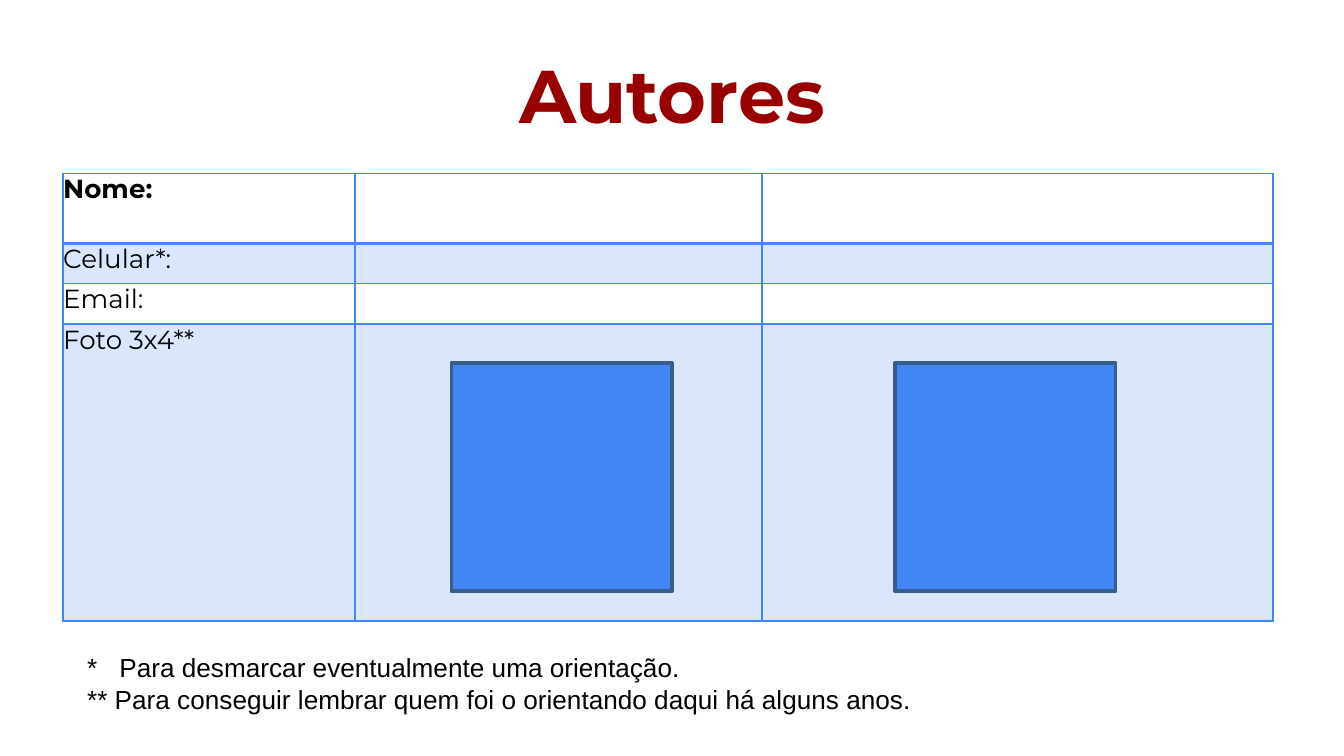
import pptx
import pptx.dml.color
import pptx.enum.shapes
import pptx.enum.text
import pptx.oxml
import pptx.oxml.ns
import pptx.util
from lxml import etree

Inches = pptx.util.Inches
Pt = pptx.util.Pt
qn = pptx.oxml.ns.qn

COLORS = {"title": "980000", "text": "000000", "blue": "4285F4", "photo_line": "385D8A"}


def rgb(name):
    return pptx.dml.color.RGBColor.from_string(COLORS[name])


def set_borders(cell, widths):
    """Draw the left, right, top and bottom borders with the given point widths."""
    properties = cell._tc.get_or_add_tcPr()
    for index, (side, width) in enumerate(zip("LRTB", widths)):
        line = etree.Element(qn(f"a:ln{side}"), w=str(Pt(width)))
        fill = etree.SubElement(line, qn("a:solidFill"))
        etree.SubElement(fill, qn("a:srgbClr"), val=COLORS["blue"])
        properties.insert(index, line)


presentation = pptx.Presentation()
presentation.slide_width = Inches(10)
presentation.slide_height = Inches(10) * 9 // 16
slide = presentation.slides.add_slide(presentation.slide_layouts[6])

# Title
title = slide.shapes.add_textbox(Inches(0.5), Inches(0.23), Inches(9), Inches(0.94))
frame = title.text_frame
frame.word_wrap = True
frame.vertical_anchor = pptx.enum.text.MSO_ANCHOR.MIDDLE
paragraph = frame.paragraphs[0]
paragraph.text = "Autores"
paragraph.alignment = pptx.enum.text.PP_ALIGN.CENTER
paragraph.font.name = "Montserrat"
paragraph.font.size = Pt(40)
paragraph.font.bold = True
paragraph.font.color.rgb = rgb("title")

# Author table
labels = ["Nome:", "Celular*:", "Email:", "Foto 3x4**"]
column_widths = [2.17, 3.03, 3.8]
row_heights = [0.52, 0.3, 0.3, 2.21]
table = slide.shapes.add_table(
    len(labels), len(column_widths), Inches(0.47), Inches(1.29),
    Inches(sum(column_widths)), Inches(sum(row_heights))).table
table.first_row = False
table.horz_banding = False
for column, width in zip(table.columns, column_widths):
    column.width = Inches(width)

for row_index, (row, label, height) in enumerate(zip(table.rows, labels, row_heights)):
    row.height = Inches(height)
    for column_index, cell in enumerate(row.cells):
        cell.margin_left = cell.margin_right = cell.margin_top = cell.margin_bottom = 0
        paragraph = cell.text_frame.paragraphs[0]
        if column_index == 0:
            paragraph.text = label
        paragraph.font.name = "Montserrat"
        paragraph.font.size = Pt(14)
        paragraph.font.bold = row_index == 0
        paragraph.font.color.rgb = rgb("text")
        if row_index % 2:
            cell.fill.solid()
            cell.fill.fore_color.rgb = rgb("blue")
            color = cell._tc.tcPr.find(".//" + qn("a:srgbClr"))
            etree.SubElement(color, qn("a:alpha"), val="20000")
        else:
            cell.fill.background()
        top = 2 if row_index == 1 else 1
        bottom = 2 if row_index == 0 else 1
        set_borders(cell, (1, 1, top, bottom))

# Footnotes, with the first text indented past its asterisk
notes = slide.shapes.add_textbox(Inches(0.55), Inches(4.8), Inches(9.06), Inches(0.53))
frame = notes.text_frame
frame.word_wrap = True
frame.text = ("*\tPara desmarcar eventualmente uma orientação.\n"
              "** Para conseguir lembrar quem foi o orientando daqui há alguns anos.")
for paragraph in frame.paragraphs:
    paragraph.font.name = "Arial"
    paragraph.font.size = Pt(14)
    paragraph.font.color.rgb = rgb("text")
    properties = paragraph._p.get_or_add_pPr()
    properties.set("marL", str(Inches(0.24)))
    properties.set("indent", str(-Inches(0.24)))

# Photo frames
for left in (3.36, 6.66):
    photo = slide.shapes.add_shape(
        pptx.enum.shapes.MSO_SHAPE.RECTANGLE,
        Inches(left), Inches(2.7), Inches(1.64), Inches(1.7))
    photo.shadow.inherit = False
    photo.fill.solid()
    photo.fill.fore_color.rgb = rgb("blue")
    photo.line.color.rgb = rgb("photo_line")
    photo.line.width = Pt(2)

presentation.save("out.pptx")
